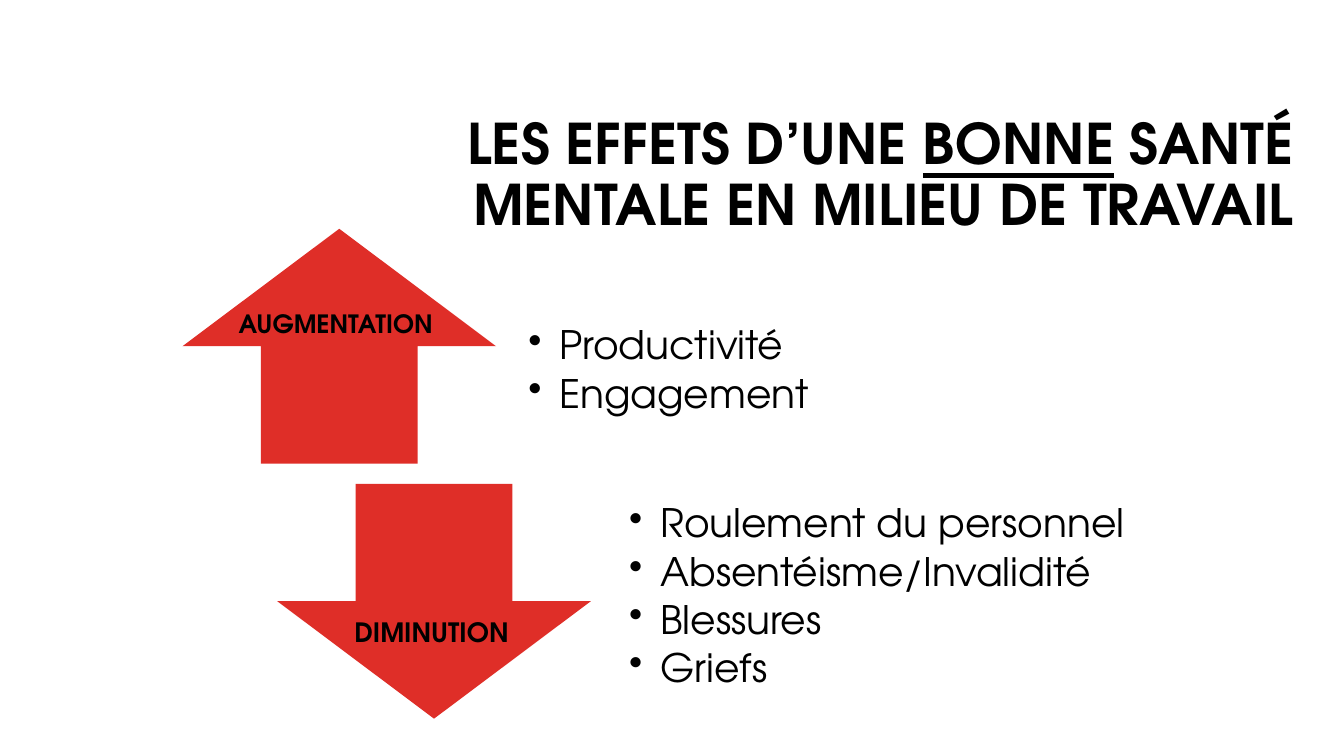
import pptx
import pptx.util
import pptx.dml.color
import pptx.enum.shapes
import pptx.enum.text
import pptx.oxml.ns
import lxml.etree

BLACK = pptx.dml.color.RGBColor(0x00, 0x00, 0x00)
RED = pptx.dml.color.RGBColor(0xDF, 0x2E, 0x28)
WHITE = pptx.dml.color.RGBColor(0xFF, 0xFF, 0xFF)
ANCHOR = pptx.enum.text.MSO_ANCHOR
ALIGN = pptx.enum.text.PP_ALIGN
ARROW = pptx.enum.shapes.MSO_SHAPE


class EffectsSlide:
    """Style and current slide; lengths count cells of a 0.01-inch grid."""
    font = "TeX Gyre Adventor"
    cell = pptx.util.Inches(0.01)
    columns, rows = 1333, 750
    indent = 31

    def __init__(self, deck):
        deck.slide_width = self.cell * self.columns
        deck.slide_height = self.cell * self.rows
        self.slide = deck.slides.add_slide(deck.slide_layouts[5])
        self.slide.background.fill.solid()
        self.slide.background.fill.fore_color.rgb = WHITE

    def area(self, *cells):
        return [self.cell * count for count in cells]

    def add_words(self, paragraph, text, size, bold=False, underline=False):
        run = paragraph.add_run()
        run.text = text
        run.font.name, run.font.size = self.font, pptx.util.Pt(size)
        run.font.bold, run.font.underline = bold, underline
        run.font.color.rgb = BLACK

    def title(self, place, parts):
        heading = self.slide.shapes.title
        heading.left, heading.top, heading.width, heading.height = self.area(*place)
        frame = heading.text_frame
        frame.word_wrap = True
        frame.auto_size = pptx.enum.text.MSO_AUTO_SIZE.NONE
        frame.vertical_anchor = ANCHOR.MIDDLE
        line = frame.paragraphs[0]
        line.alignment, line.line_spacing = ALIGN.RIGHT, 0.9
        for text, underline in parts:
            self.add_words(line, text, 40, True, underline)

    def arrow(self, kind, left, top):
        arrow = self.slide.shapes.add_shape(kind, *self.area(left, top, 311, 233))
        arrow.shadow.inherit = False
        arrow.fill.solid()
        arrow.fill.fore_color.rgb = RED
        arrow.line.fill.background()

    def label(self, place, text, size):
        frame = self.slide.shapes.add_textbox(*self.area(*place)).text_frame
        frame.word_wrap = True
        frame.paragraphs[0].alignment = ALIGN.CENTER
        self.add_words(frame.paragraphs[0], text, size, True)

    def bullets(self, left, top, side_inset, top_inset, items):
        frame = self.slide.shapes.add_textbox(*self.area(left, top, 578, 233)).text_frame
        frame.word_wrap = True
        frame.vertical_anchor = ANCHOR.TOP
        frame.margin_left = frame.margin_right = self.cell * side_inset
        frame.margin_top, frame.margin_bottom = self.area(top_inset, 0)
        for index, item in enumerate(items):
            line = frame.add_paragraph() if index else frame.paragraphs[0]
            layout = line._p.get_or_add_pPr()
            layout.set("marL", str(self.cell * self.indent))
            layout.set("indent", str(-self.cell * self.indent))
            bullet = lxml.etree.SubElement(layout, pptx.oxml.ns.qn("a:buChar"))
            bullet.set("char", "•")
            line.line_spacing, line.space_after = 0.9, pptx.util.Pt(4.2)
            self.add_words(line, item, 28)


def main():
    deck = pptx.Presentation()
    effects = EffectsSlide(deck)

    # Title
    effects.title((351, 105, 942, 141), [
        ("LES EFFETS D’UNE ", False),
        ("BONNE", True),
        (" SANTÉ MENTALE EN MILIEU DE TRAVAIL", False),
    ])

    # What rises
    effects.arrow(ARROW.UP_ARROW, 181, 227)
    effects.bullets(502, 227, 22, 103, ["Productivité", "Engagement"])
    effects.label((214, 301, 238, 40), "AUGMENTATION", 18)

    # What falls
    effects.arrow(ARROW.DOWN_ARROW, 275, 480)
    effects.bullets(596, 452, 28, 48, [
        "Roulement du personnel", "Absentéisme/Invalidité", "Blessures", "Griefs",
    ])
    effects.label((327, 606, 202, 42), "DIMINUTION", 19)

    deck.save("out.pptx")


if __name__ == "__main__":
    main()
